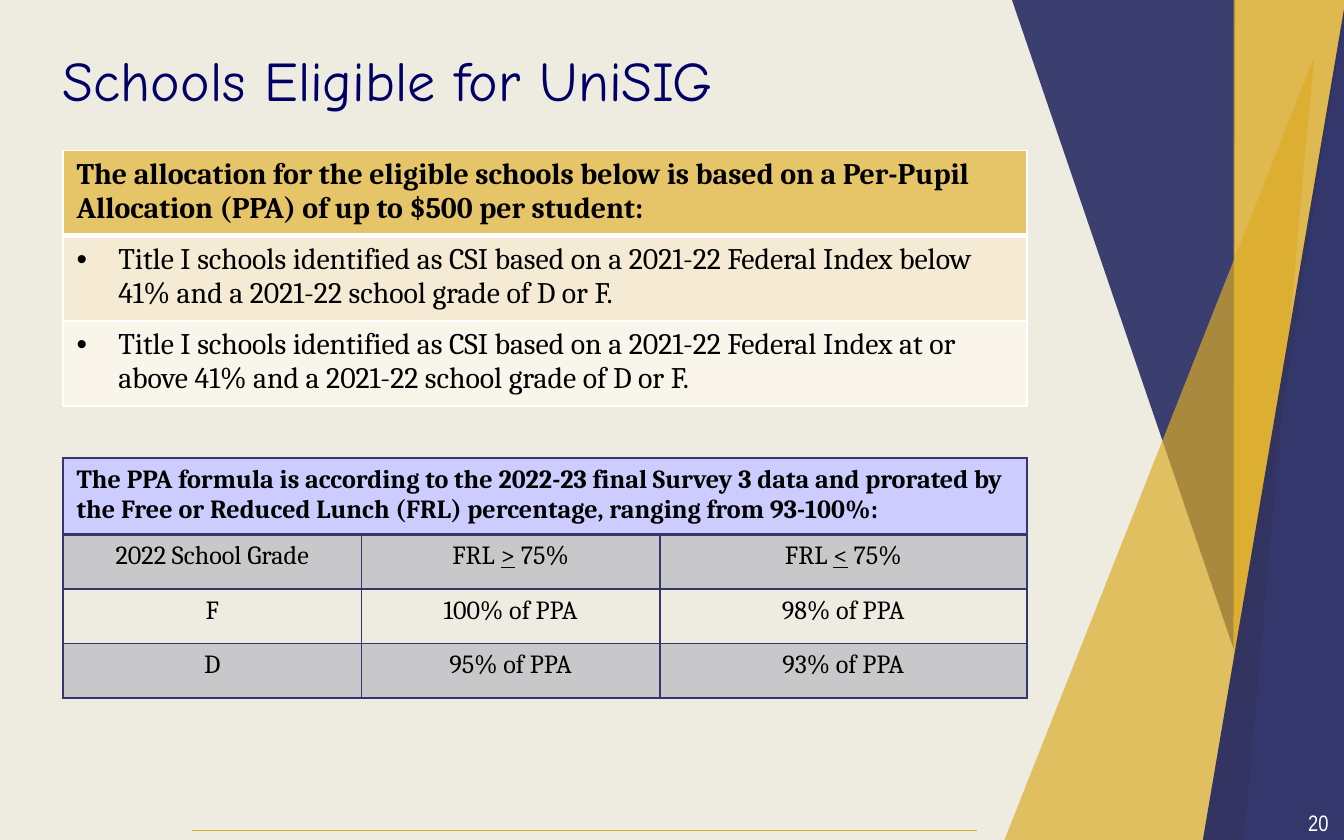
"""Build the slide on schools eligible for UniSIG."""
from lxml import etree
from pptx import Presentation
from pptx.dml.color import RGBColor
from pptx.enum.shapes import MSO_CONNECTOR
from pptx.enum.text import MSO_ANCHOR, PP_ALIGN
from pptx.oxml.ns import qn
from pptx.util import Inches, Pt

STRAIGHT = MSO_CONNECTOR.STRAIGHT
TOP, MIDDLE = MSO_ANCHOR.TOP, MSO_ANCHOR.MIDDLE
LEFT, CENTER = PP_ALIGN.LEFT, PP_ALIGN.CENTER

CREAM = RGBColor(0xEE, 0xEC, 0xE1)
NAVY = RGBColor(0x26, 0x2A, 0x63)
GOLD = RGBColor(0xDB, 0xAB, 0x27)
TITLE_BLUE = RGBColor(0x00, 0x00, 0x66)
WHITE = RGBColor(0xFF, 0xFF, 0xFF)
BLACK = RGBColor(0x00, 0x00, 0x00)
HEADER_GOLD = RGBColor(0xE6, 0xC5, 0x69)
SAND = RGBColor(0xF5, 0xEA, 0xD3)
PALE_SAND = RGBColor(0xFA, 0xF5, 0xEA)
LILAC = RGBColor(0xCC, 0xCC, 0xFF)
GRID_BLUE = RGBColor(0x34, 0x37, 0x6D)

FACETS = [
    ([(7.53, 0), (9.18, 4.83), (9.19, 0)], NAVY, 89),
    ([(9.18, 0), (9.18, 5.36), (10.02, 0)], GOLD, 78),
    ([(7.43, 6.36), (9.78, 0.42), (9.72, 1.04), (9.25, 6.33)], GOLD, 69),
    ([(8.94, 6.31), (10.01, 0.01), (10.01, 6.31)], NAVY, 93),
]
ALLOCATION_HEADER = (
    "The allocation for the eligible schools below is based on a "
    "Per-Pupil Allocation (PPA) of up to $500 per student:"
)
ELIGIBLE_SCHOOLS = [
    ("Title I schools identified as CSI based on a 2021-22 Federal Index "
     "below 41% and a 2021-22 school grade of D or F.", SAND),
    ("Title I schools identified as CSI based on a 2021-22 Federal Index "
     "at or above 41% and a 2021-22 school grade of D or F.", PALE_SAND),
]
FORMULA_HEADER = (
    "The PPA formula is according to the 2022-23 final Survey 3 data and "
    "prorated by the Free or Reduced Lunch (FRL) percentage, "
    "ranging from 93-100%:"
)
FORMULA_ROWS = [
    [["2022 School Grade"], ["FRL ", ">", " 75%"], ["FRL ", "<", " 75%"]],
    [["F"], ["100% of PPA"], ["98% of PPA"]],
    [["D"], ["95% of PPA"], ["93% of PPA"]],
]


def set_opacity(properties, percent):
    """Make the solid fill in shape or cell properties translucent."""
    color = properties.find(qn("a:solidFill"))[0]
    etree.SubElement(color, qn("a:alpha"), val=str(percent * 1000))


def add_facet(page, points, color, opacity):
    """Add a translucent polygon through points given in inches."""
    corners = [(Inches(x), Inches(y)) for x, y in points]
    builder = page.shapes.build_freeform(*corners[0])
    builder.add_line_segments(corners[1:], close=True)
    facet = builder.convert_to_shape()
    facet.shadow.inherit = False
    facet.fill.solid()
    facet.fill.fore_color.rgb = color
    facet.line.fill.background()
    set_opacity(facet.element.spPr, opacity)


def add_rule(page, left, right, y):
    """Add the thin gold line at the foot of the page."""
    rule = page.shapes.add_connector(
        STRAIGHT, Inches(left), Inches(y), Inches(right), Inches(y))
    rule.line.color.rgb = GOLD
    rule.line.width = Pt(0.75)
    etree.SubElement(rule.element.spPr, qn("a:effectLst"))


def add_span(para, text, font, size, color, bold=False, underline=False):
    """Append one formatted run to a paragraph."""
    span = para.add_run()
    span.text = text
    span.font.name = font
    span.font.size = Pt(size)
    span.font.color.rgb = color
    span.font.bold = bold
    span.font.underline = underline


def add_text(page, bounds, text, font, size, color, align, anchor, inset):
    """Add a one-line text box."""
    box = page.shapes.add_textbox(*map(Inches, bounds))
    frame = box.text_frame
    frame.word_wrap = True
    frame.vertical_anchor = anchor
    frame.margin_left = frame.margin_right = Inches(0.1)
    frame.margin_top = frame.margin_bottom = Inches(inset)
    para = frame.paragraphs[0]
    para.alignment = align
    add_span(para, text, font, size, color)


def set_borders(cell, color, top=1, bottom=1):
    """Draw all four borders of a cell, with widths in points."""
    properties = cell._tc.get_or_add_tcPr()
    for side, width in (("L", 1), ("R", 1), ("T", top), ("B", bottom)):
        line = etree.SubElement(
            properties, qn(f"a:ln{side}"), w=str(Pt(width)))
        fill = etree.SubElement(line, qn("a:solidFill"))
        etree.SubElement(fill, qn("a:srgbClr"), val=str(color))


def add_grid(page, left, top, widths, heights, color, header_rule):
    """Add a bordered table with a thicker rule below its first row."""
    table = page.shapes.add_table(
        len(heights), len(widths), Inches(left), Inches(top),
        Inches(sum(widths)), Inches(sum(heights))).table
    table.first_row = table.horz_banding = False
    for column, width in zip(table.columns, widths):
        column.width = Inches(width)
    for index, (row, height) in enumerate(zip(table.rows, heights)):
        row.height = Inches(height)
        for cell in row.cells:
            set_borders(cell, color, header_rule if index == 1 else 1,
                        header_rule if index == 0 else 1)
            cell.fill.background()
    return table


def fill_cell(cell, color, opacity=100):
    """Give a cell a solid fill."""
    cell.fill.solid()
    cell.fill.fore_color.rgb = color
    if opacity < 100:
        set_opacity(cell._tc.tcPr, opacity)


def write_cell(cell, texts, size, align=LEFT, bold=False):
    """Write runs into a cell, underlining comparison signs."""
    para = cell.text_frame.paragraphs[0]
    para.alignment = align
    for text in texts:
        add_span(para, text, "Cambria", size, BLACK, bold, text in "<>")


def add_bullet(para):
    """Give a paragraph a hanging bullet."""
    properties = para._p.get_or_add_pPr()
    properties.set("marL", str(Inches(0.31)))
    properties.set("indent", str(-Inches(0.31)))
    color = etree.SubElement(properties, qn("a:buClr"))
    etree.SubElement(color, qn("a:srgbClr"), val=str(BLACK))
    etree.SubElement(properties, qn("a:buFont"), typeface="Arial")
    etree.SubElement(properties, qn("a:buChar"), char="•")


def add_allocation_table(page):
    """Add the table of eligible schools."""
    table = add_grid(page, 0.47, 1.12, [7.17], [0.61] * 3, WHITE, 3)
    header = table.cell(0, 0)
    fill_cell(header, HEADER_GOLD)
    write_cell(header, [ALLOCATION_HEADER], 16, bold=True)
    for row, (text, color) in enumerate(ELIGIBLE_SCHOOLS, 1):
        cell = table.cell(row, 0)
        fill_cell(cell, color)
        add_bullet(cell.text_frame.paragraphs[0])
        write_cell(cell, [text], 16)


def add_formula_table(page):
    """Add the table of PPA shares by grade and FRL."""
    table = add_grid(page, 0.47, 3.41, [2.22, 2.22, 2.73],
                     [0.55] + [0.405] * 3, GRID_BLUE, 2)
    header = table.cell(0, 0)
    header.merge(table.cell(0, 2))
    fill_cell(header, LILAC)
    write_cell(header, [FORMULA_HEADER], 14, bold=True)
    for row, entries in enumerate(FORMULA_ROWS, 1):
        for column, texts in enumerate(entries):
            cell = table.cell(row, column)
            if row % 2:
                fill_cell(cell, GRID_BLUE, 20)
            write_cell(cell, texts, 14, CENTER)


def main():
    """Build and save the deck."""
    deck = Presentation()
    deck.slide_width, deck.slide_height = Inches(10), Inches(6.25)
    page = deck.slides.add_slide(deck.slide_layouts[6])
    page.background.fill.solid()
    page.background.fill.fore_color.rgb = CREAM
    for points, color, opacity in FACETS:
        add_facet(page, points, color, opacity)
    add_rule(page, 1.43, 7.27, 6.18)
    add_text(page, (9.53, 5.95, 0.56, 0.34), "20", "Arial Narrow", 12,
             WHITE, CENTER, MIDDLE, 0.05)
    add_text(page, (0.37, 0.24, 6.36, 0.73), "Schools Eligible for UniSIG",
             "Comic Neue", 30, TITLE_BLUE, LEFT, TOP, 0.1)
    add_allocation_table(page)
    add_formula_table(page)
    deck.save("out.pptx")


if __name__ == "__main__":
    main()
